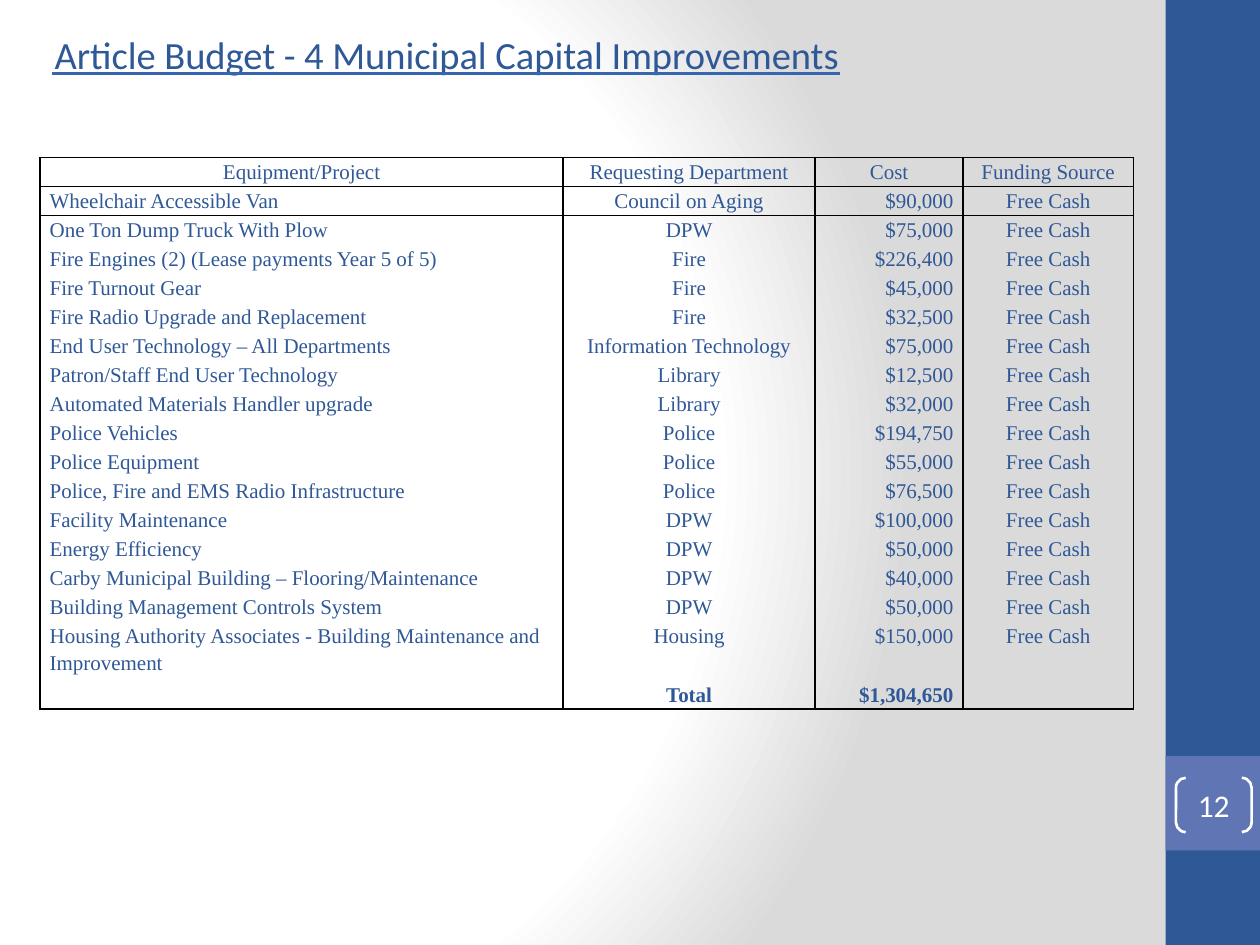
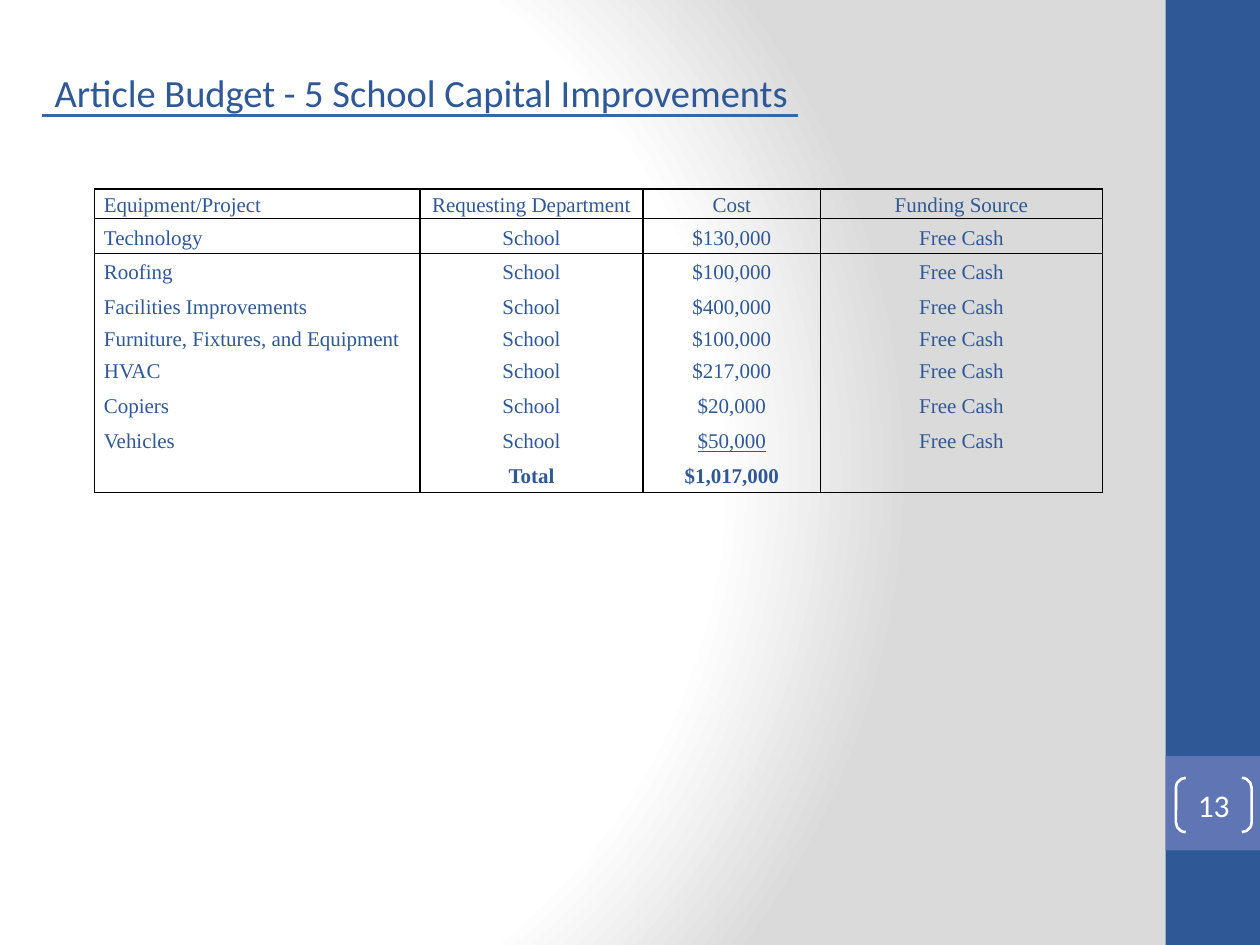
from lxml import etree
from pptx import Presentation
from pptx import util as u
from pptx.dml.color import RGBColor
from pptx.enum import shapes, text
from pptx.oxml import parse_xml
from pptx.oxml.ns import nsdecls, qn

Pt = u.Pt
LEFT, CENTER, RIGHT = text.PP_ALIGN.LEFT, text.PP_ALIGN.CENTER, text.PP_ALIGN.RIGHT
TOP, MIDDLE = text.MSO_ANCHOR.TOP, text.MSO_ANCHOR.MIDDLE
COLORS = {"navy": "2F5897", "violet": "6076B4", "rule": "3666AF",
          "white": "FFFFFF", "gray": "DADADA", "black": "000000"}
TITLE_FONT, TABLE_FONT = "Calibri", "Times New Roman"
NO_GRID_STYLE = "{2D5ABB26-0587-4C30-8999-92F81FD0307C}"
FUNDING = "Free Cash"
HEADER = ("Equipment/Project", "Requesting Department", "Cost", "Funding Source")

MUNICIPAL = [
    ("Wheelchair Accessible Van", "Council on Aging", "$90,000"),
    ("One Ton Dump Truck With Plow", "DPW", "$75,000"),
    ("Fire Engines (2) (Lease payments Year 5 of 5)", "Fire", "$226,400"),
    ("Fire Turnout Gear", "Fire", "$45,000"),
    ("Fire Radio Upgrade and Replacement", "Fire", "$32,500"),
    ("End User Technology – All Departments", "Information Technology", "$75,000"),
    ("Patron/Staff End User Technology", "Library", "$12,500"),
    ("Automated Materials Handler upgrade", "Library", "$32,000"),
    ("Police Vehicles", "Police", "$194,750"),
    ("Police Equipment", "Police", "$55,000"),
    ("Police, Fire and EMS Radio Infrastructure", "Police", "$76,500"),
    ("Facility Maintenance", "DPW", "$100,000"),
    ("Energy Efficiency", "DPW", "$50,000"),
    ("Carby Municipal Building – Flooring/Maintenance", "DPW", "$40,000"),
    ("Building Management Controls System", "DPW", "$50,000"),
    ("Housing Authority Associates - Building Maintenance and Improvement",
     "Housing", "$150,000"),
]
SCHOOL = [(project, "School", cost) for project, cost in (
    ("Technology", "$130,000"),
    ("Roofing", "$100,000"),
    ("Facilities Improvements", "$400,000"),
    ("Furniture, Fixtures, and Equipment", "$100,000"),
    ("HVAC", "$217,000"),
    ("Copiers", "$20,000"),
    ("Vehicles", "$50,000"),
)]
PAGES = [
    {"number": "12", "title": "Article Budget - 4 Municipal Capital Improvements",
     "title_top": 14.4, "rule": (30, 480, 42), "items": MUNICIPAL, "total": "$1,304,650",
     "place": (23, 90), "columns": (298.8, 144, 84.5, 97.5),
     "row": 16.6, "special_rows": {16: 33.2}, "anchor": TOP,
     "header_aligns": (CENTER,) * 4, "aligns": (LEFT, CENTER, RIGHT, CENTER),
     "underline_last": False},
    {"number": "13", "title": "Article Budget - 5 School Capital Improvements",
     "title_top": 36, "rule": (24, 456, 66), "items": SCHOOL, "total": "$1,017,000",
     "place": (54, 108), "columns": (186, 127.5, 101.5, 161),
     "row": 20, "special_rows": {0: 17, 4: 16.6}, "anchor": MIDDLE,
     "header_aligns": (LEFT,) + (CENTER,) * 3, "aligns": (LEFT,) + (CENTER,) * 3,
     "underline_last": True},
]


def color(name):
    return RGBColor.from_string(COLORS[name])


def write(frame, words, font=TITLE_FONT, size=12, ink="navy", align=LEFT, anchor=TOP,
          bold=False, underline=False, spacing=None):
    frame.word_wrap = True
    frame.vertical_anchor = anchor
    para = frame.paragraphs[0]
    para.alignment = align
    para.line_spacing = spacing
    if not words:
        etree.SubElement(para._p, qn("a:endParaRPr"), sz=str(size * 100))
        return
    span = para.add_run()
    span.text = words
    span.font.name = font
    span.font.size = Pt(size)
    span.font.bold = bold
    span.font.underline = underline
    span.font.color.rgb = color(ink)


def set_background(deck):
    stops = "".join(f'<a:gs pos="{place * 1000}"><a:srgbClr val="{COLORS[name]}"/></a:gs>'
                    for place, name in ((0, "white"), (75, "white"), (100, "gray")))
    content = deck.slide_master._element.cSld
    content.remove(content.find(qn("p:bg")))
    content.insert(0, parse_xml(
        f'<p:bg {nsdecls("p", "a")}><p:bgPr><a:gradFill rotWithShape="1">'
        f'<a:gsLst>{stops}</a:gsLst><a:path path="circle">'
        '<a:fillToRect l="20000" t="50000" r="100000" b="50000"/></a:path>'
        '</a:gradFill><a:effectLst/></p:bgPr></p:bg>'))


def add_band(page, top, height, fill):
    box = page.shapes.add_shape(shapes.MSO_SHAPE.RECTANGLE,
                                Pt(666), Pt(top), Pt(54), Pt(height))
    box.shadow.inherit = False
    box.fill.solid()
    box.fill.fore_color.rgb = color(fill)
    box.line.fill.background()


def add_number(page, number):
    box = page.shapes.add_shape(shapes.MSO_SHAPE.DOUBLE_BRACKET,
                                Pt(672), Pt(444.5), Pt(43.2), Pt(31))
    box.adjustments[0] = 0.18
    box.shadow.inherit = False
    box.fill.background()
    box.line.color.rgb = color("white")
    box.line.width = Pt(1.5)
    frame = box.text_frame
    frame.margin_left = frame.margin_right = frame.margin_top = frame.margin_bottom = 0
    write(frame, number, size=18, ink="white", align=CENTER, anchor=MIDDLE)


def add_title(page, words, top, rule):
    title = page.shapes.title
    title.left, title.top, title.width, title.height = Pt(24), Pt(top), Pt(630), Pt(34)
    title.text_frame.auto_size = text.MSO_AUTO_SIZE.NONE
    write(title.text_frame, words, size=22)
    start, end, y = rule
    line = page.shapes.add_connector(shapes.MSO_CONNECTOR.STRAIGHT,
                                     Pt(start), Pt(y), Pt(end), Pt(y))
    line.line.color.rgb = color("rule")
    line.line.width = Pt(1.25)
    etree.SubElement(line._element.spPr, qn("a:effectLst"))


def set_borders(cell, sides):
    cell.fill.background()
    for index, side in enumerate(sides):
        cell._tc.get_or_add_tcPr().insert(index, parse_xml(
            f'<a:ln{side} {nsdecls("a")} w="{Pt(1)}"><a:solidFill>'
            f'<a:srgbClr val="{COLORS["black"]}"/></a:solidFill></a:ln{side}>'))


def add_budget(page, plan):
    rows = [HEADER, *[(*item, FUNDING) for item in plan["items"]],
            ("", "Total", plan["total"], "")]
    last = len(rows) - 1
    heights = [plan["special_rows"].get(index, plan["row"]) for index in range(len(rows))]
    left, top = plan["place"]
    holder = page.shapes.add_table(len(rows), len(HEADER), Pt(left), Pt(top),
                                   Pt(sum(plan["columns"])), Pt(sum(heights)))
    table = holder.table
    table.first_row = table.horz_banding = False
    table._tbl.tblPr.find(qn("a:tableStyleId")).text = NO_GRID_STYLE
    for column, width in zip(table.columns, plan["columns"]):
        column.width = Pt(width)
    for r, (row, height) in enumerate(zip(rows, heights)):
        table.rows[r].height = Pt(height)
        aligns = plan["aligns"] if r else plan["header_aligns"]
        sides = "LR" + "T" * (r < 2) + "B" * (r in (0, last))
        for c, (words, align) in enumerate(zip(row, aligns)):
            cell = table.cell(r, c)
            cell.margin_left = cell.margin_right = Pt(5.4)
            cell.margin_top = cell.margin_bottom = 0
            cell.vertical_anchor = plan["anchor"]
            write(cell.text_frame, words, font=TABLE_FONT, align=align, anchor=None,
                  bold=r == last, spacing=1.15,
                  underline=plan["underline_last"] and (r, c) == (last - 1, 2))
            set_borders(cell, sides)


def main():
    deck = Presentation()
    deck.slide_width, deck.slide_height = Pt(720), Pt(540)
    set_background(deck)
    for plan in PAGES:
        page = deck.slides.add_slide(deck.slide_layouts.get_by_name("Title Only"))
        add_band(page, 0, 540, "navy")
        add_band(page, 432, 54, "violet")
        add_title(page, plan["title"], plan["title_top"], plan["rule"])
        add_number(page, plan["number"])
        add_budget(page, plan)
    deck.save("out.pptx")


if __name__ == "__main__":
    main()
